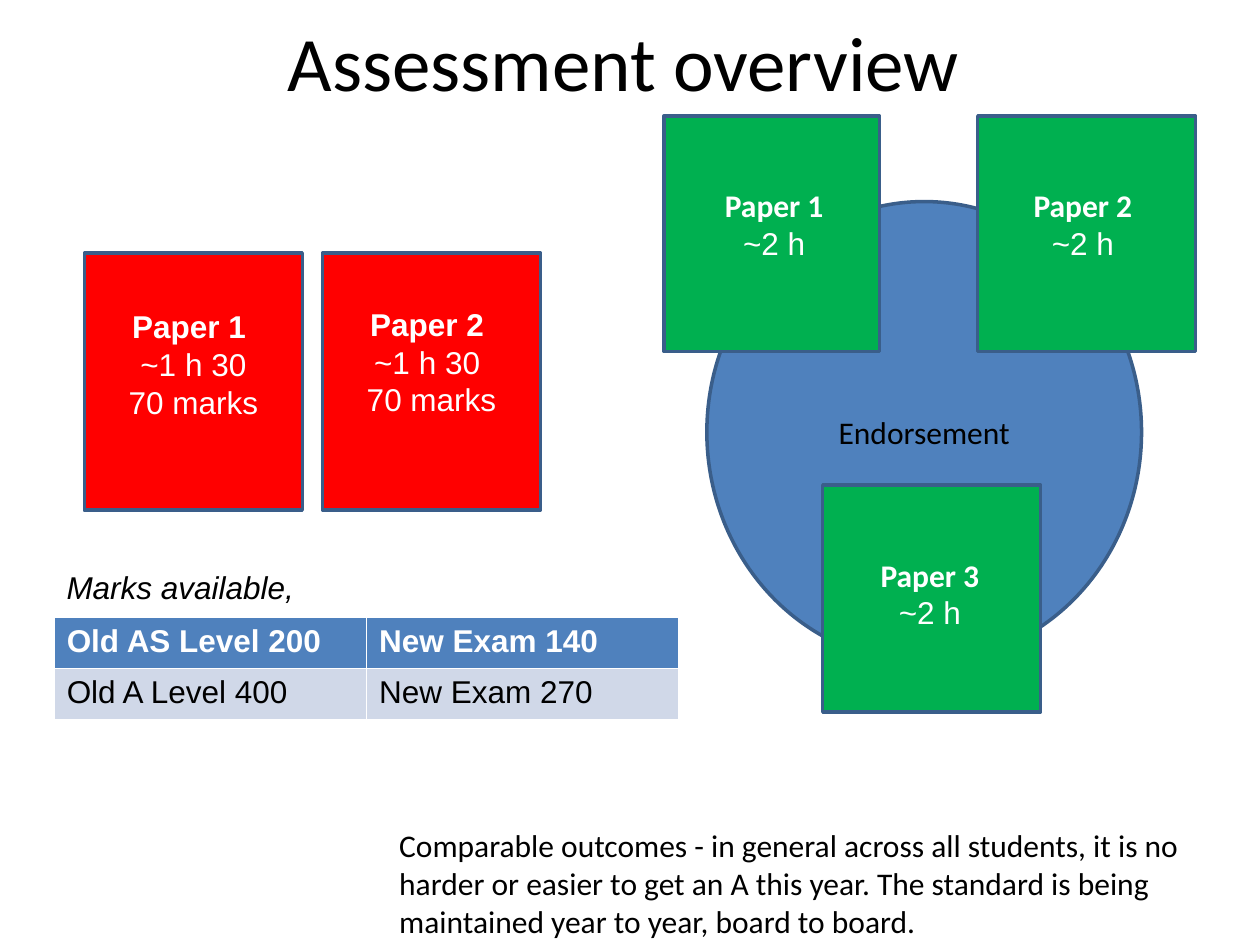
"""Build the assessment overview slide."""
from pptx import Presentation
from pptx.dml.color import RGBColor
from pptx.enum.shapes import MSO_SHAPE as SHAPE
from pptx.enum.text import MSO_ANCHOR as ANCHOR, PP_ALIGN as ALIGN
from pptx.util import Inches, Pt

BLACK = RGBColor(0x00, 0x00, 0x00)
WHITE = RGBColor(0xFF, 0xFF, 0xFF)
RED = RGBColor(0xFF, 0x00, 0x00)
GREEN = RGBColor(0x00, 0xB0, 0x50)
BLUE = RGBColor(0x4F, 0x81, 0xBD)
PALE_BLUE = RGBColor(0xD0, 0xD8, 0xE8)
OUTLINE = RGBColor(0x3A, 0x5E, 0x8A)


def write(frame, text, fonts=("Calibri",), size=18, color=BLACK, bold_first=False,
          italic=False, align=ALIGN.LEFT, anchor=ANCHOR.TOP, inset=None):
    """Write one paragraph per line, repeating the last font as needed."""
    frame.word_wrap = True
    frame.vertical_anchor = anchor
    if inset is not None:
        frame.margin_left = frame.margin_right = Inches(inset)
        frame.margin_top = frame.margin_bottom = Inches(inset)
    for index, line in enumerate(text.split("\n")):
        paragraph = frame.paragraphs[0] if index == 0 else frame.add_paragraph()
        paragraph.alignment = align
        run = paragraph.add_run()
        run.text = line
        run.font.name = fonts[min(index, len(fonts) - 1)]
        run.font.size = Pt(size)
        run.font.bold = bold_first and index == 0
        run.font.italic = italic
        run.font.color.rgb = color


def add_panel(kind, left, top, width, height, fill):
    """Add an outlined, filled shape without a shadow."""
    shape = slide.shapes.add_shape(kind, Inches(left), Inches(top), Inches(width), Inches(height))
    shape.shadow.inherit = False
    shape.fill.solid()
    shape.fill.fore_color.rgb = fill
    shape.line.color.rgb = OUTLINE
    shape.line.width = Pt(2)
    return shape


presentation = Presentation()
presentation.slide_width = Inches(10)
presentation.slide_height = Inches(7.5)
slide = presentation.slides.add_slide(presentation.slide_layouts[5])

title = slide.shapes.title
title.left, title.top = Inches(0.45), Inches(-0.03)
title.width, title.height = Inches(9), Inches(1.02)
write(title.text_frame, "Assessment overview", size=44, align=ALIGN.CENTER, anchor=ANCHOR.MIDDLE)

as_papers = [
    (0.67, 2.39, "Paper 1 \n~1 h 30\n70 marks"),
    (2.56, 2.37, "Paper 2 \n~1 h 30 \n70 marks"),
]
for left, label_top, text in as_papers:
    add_panel(SHAPE.RECTANGLE, left, 2.01, 1.73, 2.04, RED)
    label = slide.shapes.add_textbox(Inches(left), Inches(label_top), Inches(1.73), Inches(1.28))
    write(label.text_frame, text, fonts=("Arial",), color=WHITE, bold_first=True,
          align=ALIGN.CENTER, inset=0.05)

endorsement = add_panel(SHAPE.OVAL, 5.61, 1.6, 3.45, 3.66, BLUE)
write(endorsement.text_frame, "Endorsement", align=ALIGN.CENTER, anchor=ANCHOR.MIDDLE, inset=0)

a_level_papers = [
    ("Paper 3", (6.53, 3.85, 1.73, 1.8), (6.69, 4.41, 1.38, 0.91)),
    ("Paper 1", (5.27, 0.92, 1.71, 1.87), (5.41, 1.48, 1.47, 0.61)),
    ("Paper 2", (7.76, 0.92, 1.73, 1.87), (7.83, 1.48, 1.53, 0.91)),
]
for name, panel_box, label_box in a_level_papers:
    add_panel(SHAPE.RECTANGLE, *panel_box, GREEN)
    label = add_panel(SHAPE.RECTANGLE, *label_box, GREEN)
    label.line.fill.background()
    write(label.text_frame, f"{name}\n~2 h", fonts=("Calibri", "Arial"), color=WHITE,
          bold_first=True, align=ALIGN.CENTER, inset=0)

caption = slide.shapes.add_textbox(Inches(0.43), Inches(4.46), Inches(2.44), Inches(0.4))
write(caption.text_frame, "Marks available,", fonts=("Arial",), italic=True)

marks = [("Old AS Level 200", "New Exam 140"), ("Old A Level 400", "New Exam 270")]
table = slide.shapes.add_table(2, 2, Inches(0.43), Inches(4.9), Inches(4.96), Inches(0.81)).table
for row_index, row in enumerate(marks):
    is_header = row_index == 0
    for column_index, text in enumerate(row):
        cell = table.cell(row_index, column_index)
        cell.fill.solid()
        cell.fill.fore_color.rgb = BLUE if is_header else PALE_BLUE
        write(cell.text_frame, text, fonts=("Arial",), color=WHITE if is_header else BLACK,
              bold_first=is_header)

note = slide.shapes.add_textbox(Inches(3.07), Inches(6.51), Inches(6.57), Inches(1.01))
write(note.text_frame, "Comparable outcomes - in general across all students, it is no harder "
      "or easier to get an A this year. The standard is being maintained year to year, "
      "board to board.")

presentation.save("out.pptx")
